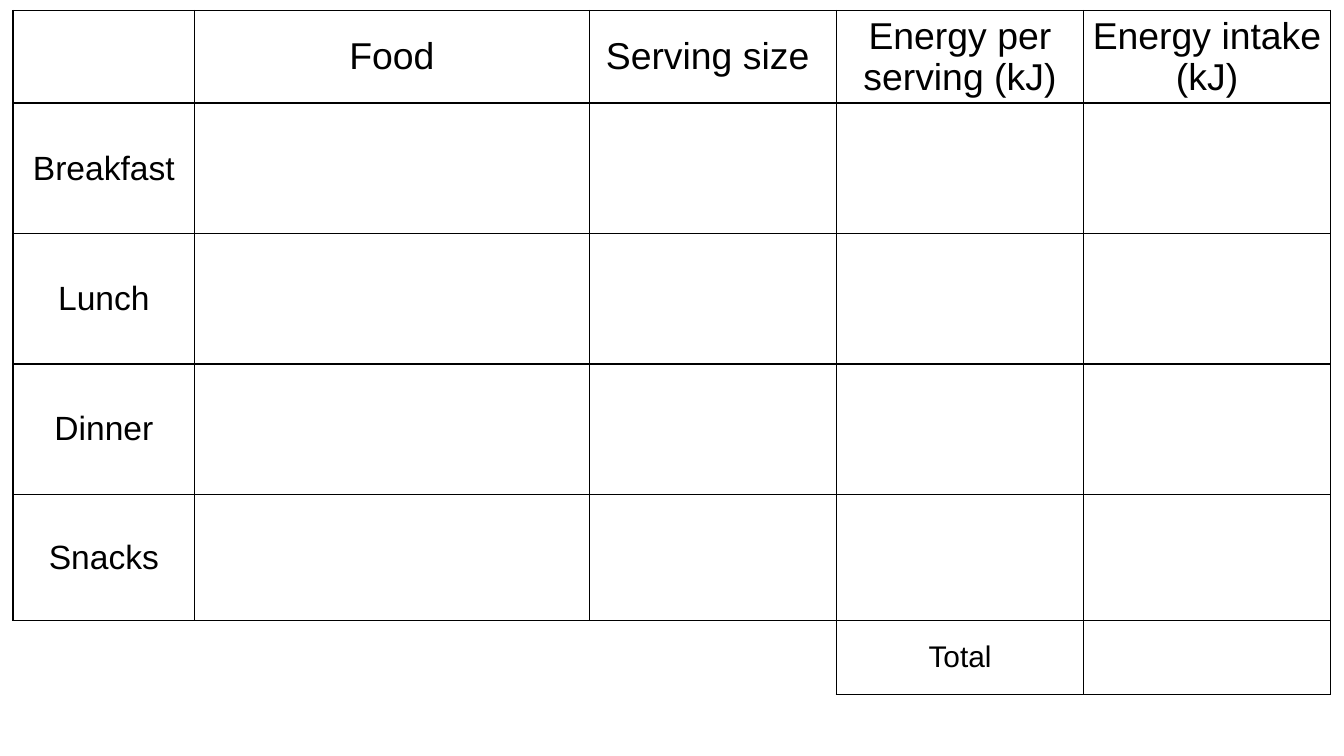
import dataclasses

import lxml.etree
import pptx
import pptx.dml.color
import pptx.enum.text
import pptx.oxml.ns
import pptx.util

Cm = pptx.util.Cm
Pt = pptx.util.Pt
SIDES = "LRTB"


@dataclasses.dataclass(frozen=True)
class Theme:
    """Colours, font and type sizes of the food diary."""

    ink: str = "000000"
    font: str = "Arial"
    header: int = 20
    meal: int = 18
    total: int = 16
    border: int = 1


THEME = Theme()
HEADERS = ["Food", "Serving size ", "Energy per serving (kJ)", "Energy intake (kJ)"]
MEALS = ["Breakfast", "Lunch", "Dinner", "Snacks"]
COLUMN_SHARES = [1.35, 2.94, 1.84, 1.84, 1.84]
ROW_SHARES = [0.69, 0.97, 0.97, 0.97, 0.94, 0.55]


def apply_format(target, values):
    """Set each named attribute of the target."""
    for name, value in values.items():
        setattr(target, name, value)


def draw_borders(cell, drawn):
    """Rule the drawn sides of a cell and clear the others."""
    properties = cell._tc.get_or_add_tcPr()
    for position, side in enumerate(SIDES):
        line = lxml.etree.Element(
            pptx.oxml.ns.qn(f"a:ln{side}"), w=str(Pt(THEME.border))
        )
        if side in drawn:
            fill = lxml.etree.SubElement(line, pptx.oxml.ns.qn("a:solidFill"))
            lxml.etree.SubElement(fill, pptx.oxml.ns.qn("a:srgbClr"), val=THEME.ink)
        else:
            lxml.etree.SubElement(line, pptx.oxml.ns.qn("a:noFill"))
        properties.insert(position, line)


def write_label(cell, text, size):
    """Write a centred label in a cell."""
    apply_format(cell, {
        "text": text,
        "vertical_anchor": pptx.enum.text.MSO_ANCHOR.MIDDLE,
        "margin_left": Cm(0.1),
        "margin_right": Cm(0.1),
        "margin_top": 0,
        "margin_bottom": 0,
    })
    para = cell.text_frame.paragraphs[0]
    para.alignment = pptx.enum.text.PP_ALIGN.CENTER
    span = para.runs[0]
    apply_format(span.font, {"name": THEME.font, "size": Pt(size), "bold": False})
    span.font.color.rgb = pptx.dml.color.RGBColor.from_string(THEME.ink)


def add_food_diary(page, left, top, width, height):
    """Place the meal table with its total row in the given box."""
    table = page.shapes.add_table(
        len(ROW_SHARES), len(COLUMN_SHARES), left, top, width, height
    ).table
    apply_format(table, {"first_row": False, "horz_banding": False})
    for column, share in zip(table.columns, COLUMN_SHARES):
        column.width = int(width * share / sum(COLUMN_SHARES))
    for row, share in zip(table.rows, ROW_SHARES):
        row.height = int(height * share / sum(ROW_SHARES))

    last_row = len(ROW_SHARES) - 1
    total_column = len(COLUMN_SHARES) - 2
    blank_sides = {number: "T" for number in range(total_column)}
    blank_sides[total_column - 1] = "TR"
    for row_number in range(len(ROW_SHARES)):
        for column_number in range(len(COLUMN_SHARES)):
            cell = table.cell(row_number, column_number)
            cell.fill.background()
            in_last_row = row_number == last_row
            drawn = blank_sides.get(column_number, SIDES) if in_last_row else SIDES
            draw_borders(cell, drawn)
    table.cell(last_row, 0).merge(table.cell(last_row, total_column - 1))

    for column_number, header in enumerate(HEADERS, 1):
        write_label(table.cell(0, column_number), header, THEME.header)
    for row_number, meal in enumerate(MEALS, 1):
        write_label(table.cell(row_number, 0), meal, THEME.meal)
    write_label(table.cell(last_row, total_column), "Total", THEME.total)


def main():
    """Build and save the one-page deck."""
    deck = pptx.Presentation()
    apply_format(deck, {"slide_width": Cm(25.4), "slide_height": Cm(14.29)})
    page = deck.slides.add_slide(deck.slide_layouts[6])
    add_food_diary(page, Cm(0.25), Cm(0.2), Cm(24.9), Cm(12.93))
    deck.save("out.pptx")


if __name__ == "__main__":
    main()
